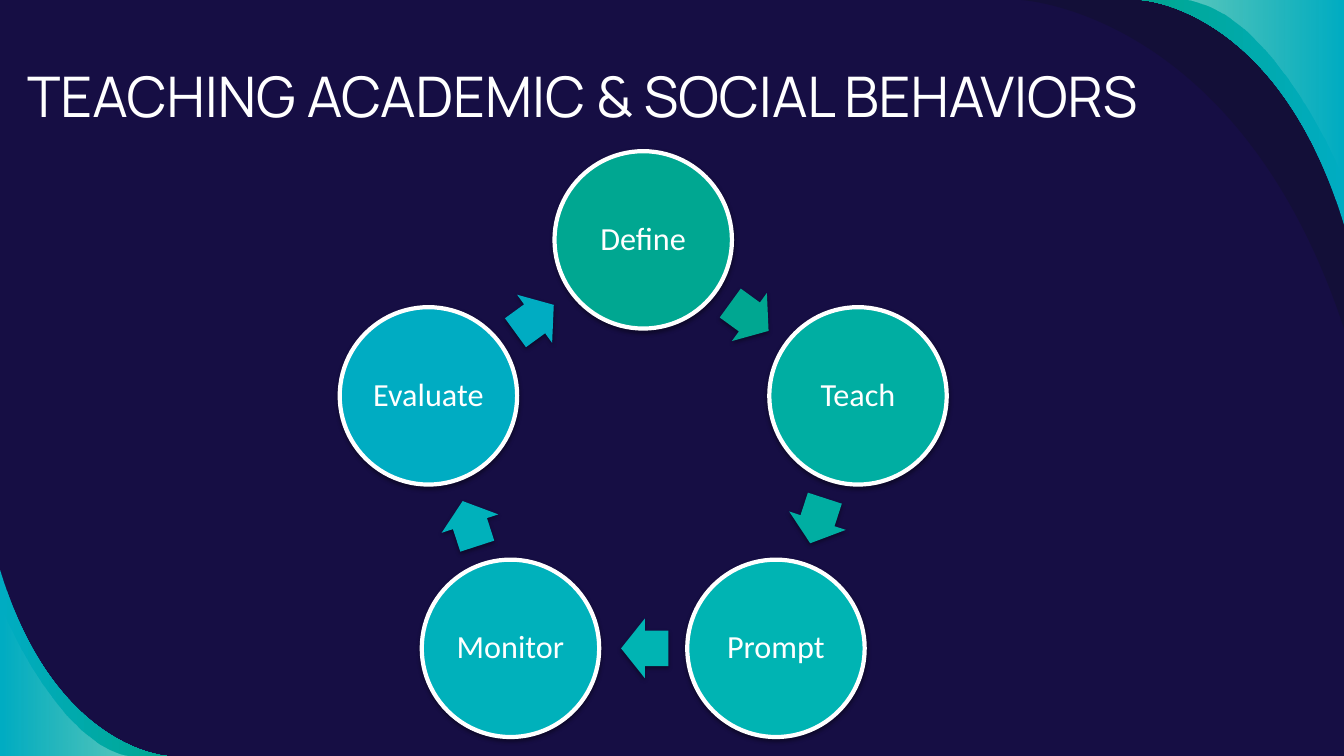
import math

from lxml import etree
from pptx import Presentation
from pptx.dml.color import RGBColor
from pptx.enum.shapes import MSO_SHAPE
from pptx.enum.text import MSO_ANCHOR, PP_ALIGN
from pptx.oxml import parse_xml
from pptx.oxml.ns import nsdecls, qn
from pptx.util import Inches, Pt

OVAL = MSO_SHAPE.OVAL
ARROW = MSO_SHAPE.RIGHT_ARROW
MIDDLE = MSO_ANCHOR.MIDDLE
CENTER = PP_ALIGN.CENTER

COLORS = {
    "background": "160E44",
    "white": "FFFFFF",
    "blue": "00ACC2",
    "green": "00A791",
    "dark": "12102F",
    "shadow": "000000",
}
# Gradient stops as (position, colour, opacity), all in percent
BAND = [(0, "blue", 100), (100, "green", 100)]
SHEEN = [(0, "white", 0), (100, "white", 36)]
STEPS = [
    ("Define", "00A791"),
    ("Teach", "00AEA2"),
    ("Prompt", "00B4B3"),
    ("Monitor", "00B1BB"),
    ("Evaluate", "00ACC2"),
]


def rgb(value):
    return RGBColor.from_string(value)


def color_xml(name, opacity):
    return (f'<a:srgbClr val="{COLORS[name]}">'
            f'<a:alpha val="{opacity * 1000}"/></a:srgbClr>')


def set_gradient(sp, stops, angle):
    """Fill with translucent stops; a single stop gives a plain fill."""
    sp.fill.solid()
    solid = sp._element.spPr.find(qn("a:solidFill"))
    if len(stops) == 1:
        xml = f'<a:solidFill {nsdecls("a")}>{color_xml(*stops[0][1:])}</a:solidFill>'
    else:
        items = "".join(f'<a:gs pos="{pos * 1000}">{color_xml(name, opacity)}</a:gs>'
                        for pos, name, opacity in stops)
        xml = (f'<a:gradFill {nsdecls("a")} rotWithShape="1"><a:gsLst>{items}</a:gsLst>'
               f'<a:lin ang="{angle * 60000}" scaled="0"/></a:gradFill>')
    solid.getparent().replace(solid, parse_xml(xml))


def add_shadow(sp):
    sp.shadow.inherit = False
    effects = sp._element.spPr.find(qn("a:effectLst"))
    outer = etree.SubElement(effects, qn("a:outerShdw"), blurRad=str(Pt(3.1)),
                             dist=str(Pt(1.6)), dir="5400000", rotWithShape="0")
    color = etree.SubElement(outer, qn("a:srgbClr"), val=COLORS["shadow"])
    etree.SubElement(color, qn("a:alpha"), val="38000")


def bend_first_side(sp):
    """Turn the first three line segments into one cubic curve."""
    lines = list(sp._element.iter(qn("a:lnTo")))[:3]
    curve = etree.Element(qn("a:cubicBezTo"))
    lines[0].addprevious(curve)
    for line in lines:
        curve.append(line[0])
        line.getparent().remove(line)


def add_corner(slide, corner, layers, angle):
    """Stack curved layers, each closed through the slide corner."""
    for curve, stops in layers:
        first, *rest = [tuple(map(Inches, point)) for point in curve + [corner]]
        builder = slide.shapes.build_freeform(*first, scale=1.0)
        builder.add_line_segments(rest, close=True)
        sp = builder.convert_to_shape()
        bend_first_side(sp)
        sp.shadow.inherit = False
        sp.line.fill.background()
        set_gradient(sp, stops, angle)


def add_title(slide, text, left, top, width, height):
    box = slide.shapes.add_textbox(*map(Inches, (left, top, width, height)))
    tf = box.text_frame
    tf.word_wrap = True
    tf.vertical_anchor = MIDDLE
    tf.margin_left = tf.margin_right = tf.margin_top = tf.margin_bottom = Inches(0.1)
    r = tf.paragraphs[0].add_run()
    r.text = text
    r.font.size = Pt(40)
    r.font.name = "Manrope"
    r.font.color.rgb = rgb(COLORS["white"])


def add_centered(slide, kind, center, width, height, color):
    x, y = center
    sp = slide.shapes.add_shape(kind, Inches(x - width / 2), Inches(y - height / 2),
                                Inches(width), Inches(height))
    sp.fill.solid()
    sp.fill.fore_color.rgb = rgb(color)
    sp.line.fill.background()
    add_shadow(sp)
    return sp


def add_step(slide, center, size, label, color):
    sp = add_centered(slide, OVAL, center, size, size, color)
    sp.line.color.rgb = rgb(COLORS["white"])
    sp.line.width = Pt(3)
    tf = sp.text_frame
    tf.word_wrap = True
    tf.vertical_anchor = MIDDLE
    tf.margin_left = tf.margin_right = tf.margin_top = tf.margin_bottom = Inches(0.03)
    p = tf.paragraphs[0]
    p.alignment = CENTER
    p.line_spacing = 0.9
    r = p.add_run()
    r.text = label
    r.font.size = Pt(23)
    r.font.name = "Calibri"
    r.font.color.rgb = rgb(COLORS["white"])


def add_cycle(slide, steps, cx, cy, radius, size):
    """Circles spaced evenly clockwise from the top, an arrow after each."""
    turn = 360 / len(steps)
    pullback = 0.015
    arrow_radius = radius * math.cos(math.radians(turn / 2))
    for i, (label, color) in enumerate(steps):
        a = math.radians(i * turn)
        center = (cx + radius * math.sin(a), cy - radius * math.cos(a))
        add_step(slide, center, size, label, color)

        heading = (i + 0.5) * turn
        a = math.radians(heading)
        center = (cx + arrow_radius * math.sin(a) - pullback * math.cos(a),
                  cy - arrow_radius * math.cos(a) - pullback * math.sin(a))
        arrow = add_centered(slide, ARROW, center, 0.47, 0.59, color)
        arrow.adjustments[0] = 0.6
        arrow.adjustments[1] = 0.5
        arrow.rotation = heading


def main():
    prs = Presentation()
    prs.slide_width, prs.slide_height = Inches(13.33), Inches(7.5)
    slide = prs.slides.add_slide(prs.slide_layouts[6])
    slide.background.fill.solid()
    slide.background.fill.fore_color.rgb = rgb(COLORS["background"])

    add_corner(slide, (0, 7.5), [
        ([(1.66, 7.5), (1.66, 7.5), (0.54, 7.44), (0, 5.65)], BAND),
        ([(0, 6.01), (0, 6.01), (0.56, 7.41), (1.32, 7.5)], SHEEN),
    ], angle=0)
    add_corner(slide, (13.33, 0), [
        ([(13.33, 3.26), (12.29, 0.1), (10.12, 0), (10.12, 0)], [(0, "dark", 54)]),
        ([(11.32, 0), (11.32, 0), (12.68, 0.07), (13.33, 2.23)], BAND),
        ([(13.33, 1.8), (13.33, 1.8), (12.66, 0.11), (11.74, 0)], SHEEN),
    ], angle=180)
    add_title(slide, "TEACHING ACADEMIC & SOCIAL BEHAVIORS", 0.17, 0.48, 13.6, 0.92)
    add_cycle(slide, STEPS, cx=6.38, cy=4.62, radius=2.24, size=1.76)

    prs.save("out.pptx")


if __name__ == "__main__":
    main()
